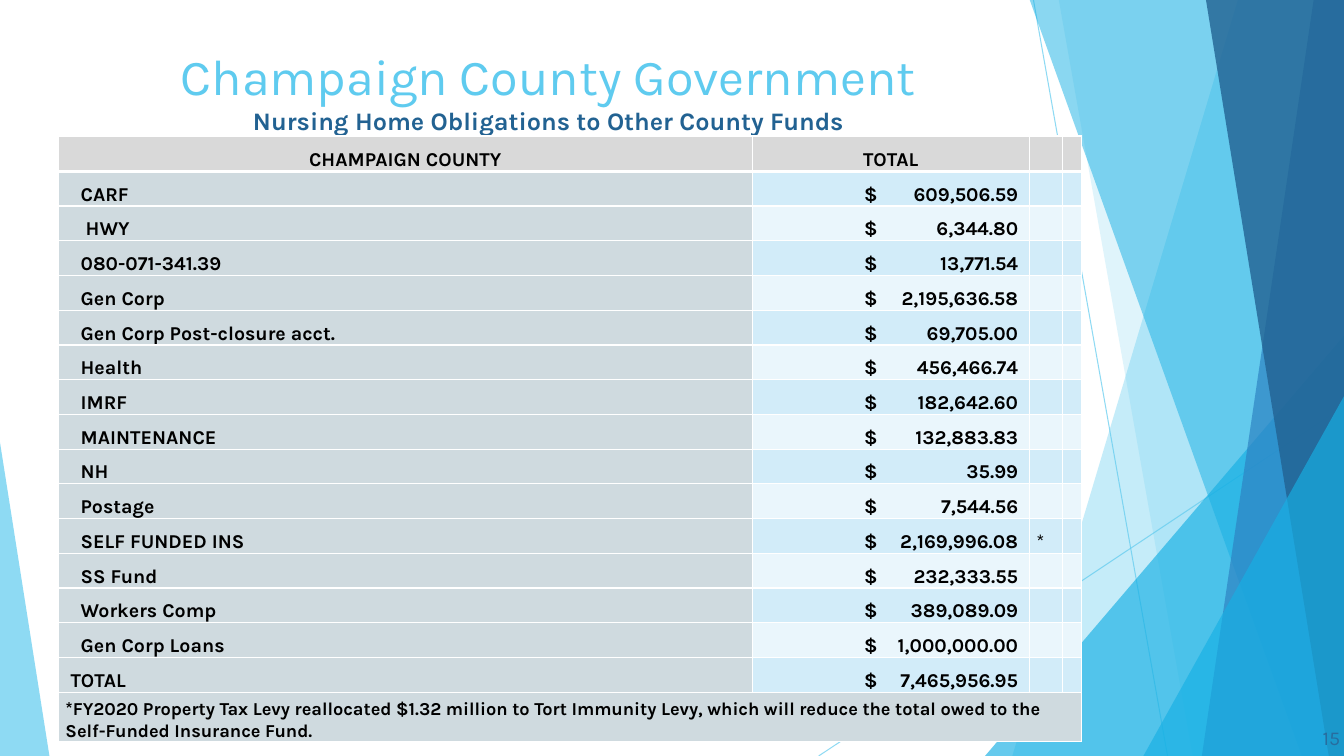
from lxml import etree
from pptx import Presentation
from pptx import util as u
from pptx.dml.color import RGBColor
from pptx.enum import shapes, text
from pptx.oxml.ns import qn

WIDTH, HEIGHT = 13.33, 7.5
FONT = "Karla"
COLORS = {
    "sky": "5FCBEF", "cyan": "17B0E4", "blue": "2E83C3", "navy": "226292",
    "number": "286D9F", "white": "FFFFFF", "black": "000000",
    "header": "D9D9D9", "label": "CFDADF", "odd": "D2ECF9", "even": "EAF6FC",
}

# Content
TITLE = "Champaign County Government"
SUBTITLE = "Nursing Home Obligations to Other County Funds"
PAGE_NUMBER = "15"
HEADER = ("CHAMPAIGN COUNTY", "TOTAL")
FUNDS = [  # label, amount, indent, mark
    ("CARF", "609,506.59", 0.15, ""),
    ("HWY", "6,344.80", 0.2, ""),
    ("080-071-341.39", "13,771.54", 0.15, ""),
    ("Gen Corp", "2,195,636.58", 0.15, ""),
    ("Gen Corp Post-closure acct.", "69,705.00", 0.15, ""),
    ("Health", "456,466.74", 0.15, ""),
    ("IMRF", "182,642.60", 0.15, ""),
    ("MAINTENANCE", "132,883.83", 0.15, ""),
    ("NH", "35.99", 0.15, ""),
    ("Postage", "7,544.56", 0.15, ""),
    ("SELF FUNDED INS", "2,169,996.08", 0.15, "*"),
    ("SS Fund", "232,333.55", 0.15, ""),
    ("Workers Comp", "389,089.09", 0.15, ""),
    ("Gen Corp Loans", "1,000,000.00", 0.15, ""),
    ("TOTAL", "7,465,956.95", 0.05, ""),
]
FOOTNOTE = ("*FY2020 Property Tax Levy reallocated $1.32 million to Tort Immunity Levy, "
            "which will reduce the total owed to the Self-Funded Insurance Fund.")

# Table grid
TABLE_LEFT, TABLE_TOP, TABLE_HEIGHT = 0.58, 1.35, 6.01
COLUMNS = (6.88, 2.75, 0.33, 0.19)
HEADER_ROW, FOOTNOTE_ROW = 0.35, 0.49
FUND_ROW = (TABLE_HEIGHT - HEADER_ROW - FOOTNOTE_ROW) / len(FUNDS)
INSET, DOLLAR_INSET, AMOUNT_TAB = 0.07, 1.11, 1.53

# Backdrop, back to front
RAYS = [((10.25, 0), (11.58, HEIGHT)), ((WIDTH, 4.03), (8.12, HEIGHT))]
FACETS = [  # bands: top x, bottom x; triangles: left, top, width, apex
    ("band", (12.28, 10.04), "sky", 36),
    ("band", (10.5, 11.83), "sky", 20),
    ("triangle", (9.77, 3.33, 3.56, 1), "cyan", 66),
    ("band", (10.21, 12.91), "cyan", 50),
    ("band", (13.03, 11.92), "blue", 70),
    ("band", (11.96, 13.18), "navy", 80),
    ("triangle", (11.34, 3.93, 1.99, 1), "cyan", 66),
    ("triangle", (0, 4.39, 0.49, 0), "sky", 70),
]

presentation = Presentation()
presentation.slide_width, presentation.slide_height = u.Inches(WIDTH), u.Inches(HEIGHT)
slide = presentation.slides.add_slide(presentation.slide_layouts[6])


def rgb(name):
    return RGBColor.from_string(COLORS[name])


def set_alpha(element, percent):
    color = next(element.iter(qn("a:srgbClr")))
    etree.SubElement(color, qn("a:alpha"), val=str(percent * 1000))


def write(paragraph, words, size=14, color="black", bold=True, align="LEFT", indent=0):
    run = paragraph.add_run()
    run.text = words
    run.font.name, run.font.size, run.font.bold = FONT, u.Pt(size), bold
    run.font.color.rgb = rgb(color)
    paragraph.alignment = getattr(text.PP_ALIGN, align)
    if indent:
        paragraph._p.get_or_add_pPr().set("marL", str(u.Inches(indent)))


def add_text_box(left, top, width, height):
    frame = slide.shapes.add_textbox(*map(u.Inches, (left, top, width, height))).text_frame
    frame.word_wrap = True
    return frame


def style_cell(cell, fill, bottom=1, left=INSET):
    cell.margin_left, cell.margin_right = u.Inches(left), u.Inches(INSET)
    cell.margin_top = cell.margin_bottom = 0
    cell.vertical_anchor = text.MSO_ANCHOR.BOTTOM
    properties = cell._tc.get_or_add_tcPr()
    for side in "LRTB":
        points = bottom if side == "B" else 1
        border = etree.SubElement(properties, qn(f"a:ln{side}"), w=str(u.Pt(points)))
        solid = etree.SubElement(border, qn("a:solidFill"))
        etree.SubElement(solid, qn("a:srgbClr"), val=COLORS["white"])
    cell.fill.solid()
    cell.fill.fore_color.rgb = rgb(fill)


# Backdrop
for start, end in RAYS:
    ray = slide.shapes.add_connector(shapes.MSO_CONNECTOR.STRAIGHT, *map(u.Inches, start + end))
    ray.line.color.rgb, ray.line.width = rgb("sky"), u.Pt(0.75)
    set_alpha(ray._element.spPr, 70)
    etree.SubElement(ray._element.spPr, qn("a:effectLst"))

for kind, place, color, alpha in FACETS:
    if kind == "band":
        top_x, bottom_x = place
        builder = slide.shapes.build_freeform(u.Inches(top_x), u.Inches(-0.01))
        corners = [(WIDTH, -0.01), (WIDTH, HEIGHT), (bottom_x, HEIGHT)]
        builder.add_line_segments([(u.Inches(x), u.Inches(y)) for x, y in corners])
        facet = builder.convert_to_shape()
    else:
        left, top, width, apex = place
        facet = slide.shapes.add_shape(
            shapes.MSO_SHAPE.ISOSCELES_TRIANGLE,
            *map(u.Inches, (left, top, width, HEIGHT - top)))
        facet.adjustments[0] = apex
    facet.shadow.inherit = False
    facet.fill.solid()
    facet.fill.fore_color.rgb = rgb(color)
    set_alpha(facet._element.spPr, alpha)
    facet.line.fill.background()

# Title and page number
heading = add_text_box(0.74, 0.4, 9.4, 1)
write(heading.paragraphs[0], TITLE, size=36, color="sky", bold=False, align="CENTER")
write(heading.add_paragraph(), SUBTITLE, size=18, color="navy", align="CENTER")
number = add_text_box(12.64, 7.12, 0.75, 0.4)
number.vertical_anchor = text.MSO_ANCHOR.MIDDLE
write(number.paragraphs[0], PAGE_NUMBER, color="number", bold=False, align="RIGHT")

# Table
row_heights = [HEADER_ROW] + [FUND_ROW] * len(FUNDS) + [FOOTNOTE_ROW]
table = slide.shapes.add_table(
    len(row_heights), len(COLUMNS),
    *map(u.Inches, (TABLE_LEFT, TABLE_TOP, sum(COLUMNS), TABLE_HEIGHT))).table
table.first_row = table.horz_banding = False
for column, width in zip(table.columns, COLUMNS):
    column.width = u.Inches(width)
for row, height in zip(table.rows, row_heights):
    row.height = u.Inches(height)

for index in range(len(COLUMNS)):
    cell = table.cell(0, index)
    style_cell(cell, "header", bottom=3)
    if index < len(HEADER):
        write(cell.text_frame.paragraphs[0], HEADER[index], align="CENTER")

for row, (label, amount, indent, mark) in enumerate(FUNDS, 1):
    cells = [table.cell(row, index) for index in range(len(COLUMNS))]
    band = "odd" if row % 2 else "even"
    for index, cell in enumerate(cells):
        style_cell(cell, band if index else "label", left=DOLLAR_INSET if index == 1 else INSET)
    label_line, amount_line, mark_line = [cell.text_frame.paragraphs[0] for cell in cells[:3]]
    write(label_line, label, indent=indent)
    write(amount_line, f"$\t{amount}")
    tabs = etree.SubElement(amount_line._p.get_or_add_pPr(), qn("a:tabLst"))
    etree.SubElement(tabs, qn("a:tab"), pos=str(u.Inches(AMOUNT_TAB)), algn="r")
    if mark:
        write(mark_line, mark, bold=False)

last = len(row_heights) - 1
footnote = table.cell(last, 0)
footnote.merge(table.cell(last, len(COLUMNS) - 1))
for index in range(len(COLUMNS)):
    style_cell(table.cell(last, index), "label")
write(footnote.text_frame.paragraphs[0], FOOTNOTE, size=13)

presentation.save("out.pptx")
